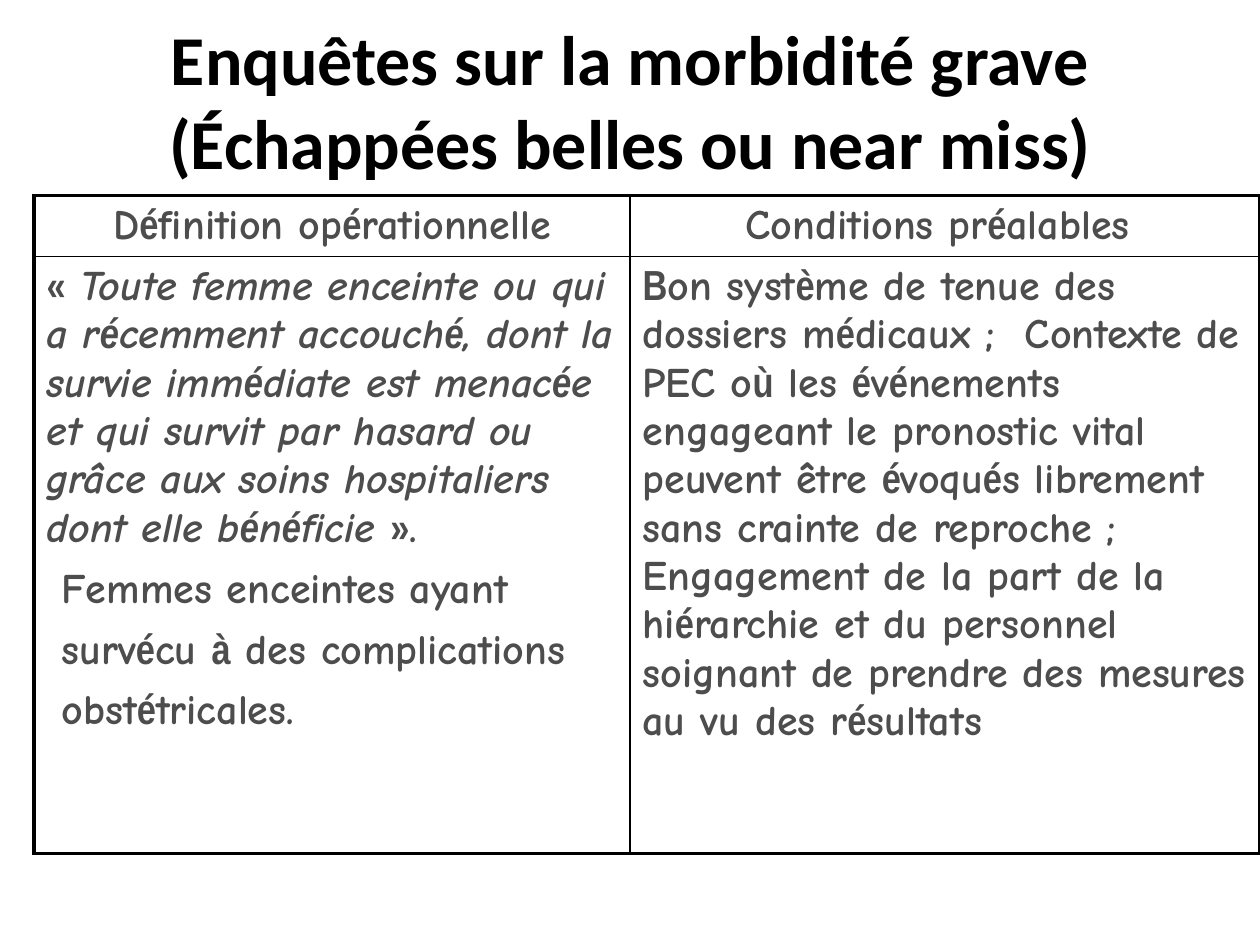
from itertools import groupby

from lxml import etree
from pptx import Presentation
from pptx import util as u
from pptx.dml.color import RGBColor
from pptx.enum import text
from pptx.oxml import ns

BLACK = RGBColor(0x00, 0x00, 0x00)
GREY = RGBColor(0x4D, 0x4D, 0x4D)
TITLE_FONT, BODY_FONT, ACCENT_FONT = "Calibri", "Comic Neue", "Arial Narrow"
ACCENT_LETTERS = "éèàù«»B"
OUTER, INNER = 2.25, 1

HEADERS = ["Définition opérationnelle", "Conditions préalables "]
DEFINITION = [
    [("« ", False),
     ("Toute femme enceinte ou qui a récemment accouché, dont la survie "
      "immédiate est menacée et qui survit par hasard ou grâce aux soins "
      "hospitaliers dont elle bénéficie ", True),
     ("».", False)],
    [(" Femmes enceintes ayant", False)],
    [(" survécu à des complications", False)],
    [(" obstétricales.", False)],
]
CONDITIONS = [[(
    "Bon système de tenue des dossiers médicaux ;  Contexte de PEC où les "
    "événements engageant le pronostic vital peuvent être évoqués librement "
    "sans crainte de reproche ; Engagement de la part de la hiérarchie et du "
    "personnel soignant de prendre des mesures au vu des résultats", False)]]


def write(para, words, size=24, font=BODY_FONT, color=GREY, bold=True, italic=False):
    span = para.add_run()
    span.text = words
    span.font.size = u.Pt(size)
    span.font.name = font
    span.font.color.rgb = color
    span.font.bold = bold
    span.font.italic = italic


class Page:
    def __init__(self, deck):
        self.deck = deck
        self.slide = deck.slides.add_slide(deck.slide_layouts[0])

    def place(self, left, top, width, height):
        across, down = self.deck.slide_width, self.deck.slide_height
        return int(left * across), int(top * down), int(width * across), int(height * down)

    def title(self, words, *share):
        box = self.slide.shapes.title
        box.left, box.top, box.width, box.height = self.place(*share)
        frame = box.text_frame
        frame.word_wrap = True
        frame.auto_size = text.MSO_AUTO_SIZE.NONE
        frame.vertical_anchor = text.MSO_ANCHOR.MIDDLE
        para = frame.paragraphs[0]
        para.alignment = text.PP_ALIGN.CENTER
        write(para, words, size=40, font=TITLE_FONT, color=BLACK)

    def drop_empty_placeholders(self):
        for box in list(self.slide.placeholders):
            if not box.text_frame.text:
                box.element.getparent().remove(box.element)

    def table(self, rows, widths, heights, left, top):
        place = self.place(left, top, sum(widths), sum(heights))
        grid = self.slide.shapes.add_table(len(heights), len(widths), *place).table
        grid.first_row = grid.horz_banding = False
        for column, width in zip(grid.columns, widths):
            column.width = int(width * self.deck.slide_width)
        for row, height in zip(grid.rows, heights):
            row.height = int(height * self.deck.slide_height)
        last_row, last_column = len(heights) - 1, len(widths) - 1
        for r, row in enumerate(rows):
            for c, paragraphs in enumerate(row):
                cell = grid.cell(r, c)
                self.fill_cell(cell, paragraphs, centred=r == 0)
                self.border(cell, L=c == 0, R=c == last_column, T=r == 0, B=r == last_row)
                cell.fill.background()

    def fill_cell(self, cell, paragraphs, centred):
        frame = cell.text_frame
        for number, pieces in enumerate(paragraphs):
            para = frame.add_paragraph() if number else frame.paragraphs[0]
            para.alignment = text.PP_ALIGN.CENTER if centred else text.PP_ALIGN.LEFT
            para.space_before = u.Pt(2.4 if number else 0)
            para.space_after = u.Pt(4.8 if number < len(paragraphs) - 1 else 0)
            for words, italic in pieces:
                for accented, letters in groupby(words, lambda letter: letter in ACCENT_LETTERS):
                    font = ACCENT_FONT if accented else BODY_FONT
                    write(para, "".join(letters), font=font, italic=italic)

    def border(self, cell, **sides):
        properties = cell._tc.get_or_add_tcPr()
        for side, outer in sides.items():
            line = etree.SubElement(properties, ns.qn(f"a:ln{side}"))
            line.set("w", str(u.Pt(OUTER if outer else INNER)))
            fill = etree.SubElement(line, ns.qn("a:solidFill"))
            etree.SubElement(fill, ns.qn("a:srgbClr")).set("val", str(BLACK))


def main():
    deck = Presentation()
    deck.slide_width, deck.slide_height = u.Inches(10), u.Inches(7.5)
    page = Page(deck)
    page.title("Enquêtes sur la morbidité grave (Échappées belles ou near miss)",
               0.05, 0.044, 0.9, 0.123)
    page.drop_empty_placeholders()
    header = [[[(words, False)]] for words in HEADERS]
    page.table([header, [DEFINITION, CONDITIONS]],
               widths=[0.473, 0.5], heights=[0.06, 0.632], left=0.027, top=0.207)
    deck.save("out.pptx")


if __name__ == "__main__":
    main()
